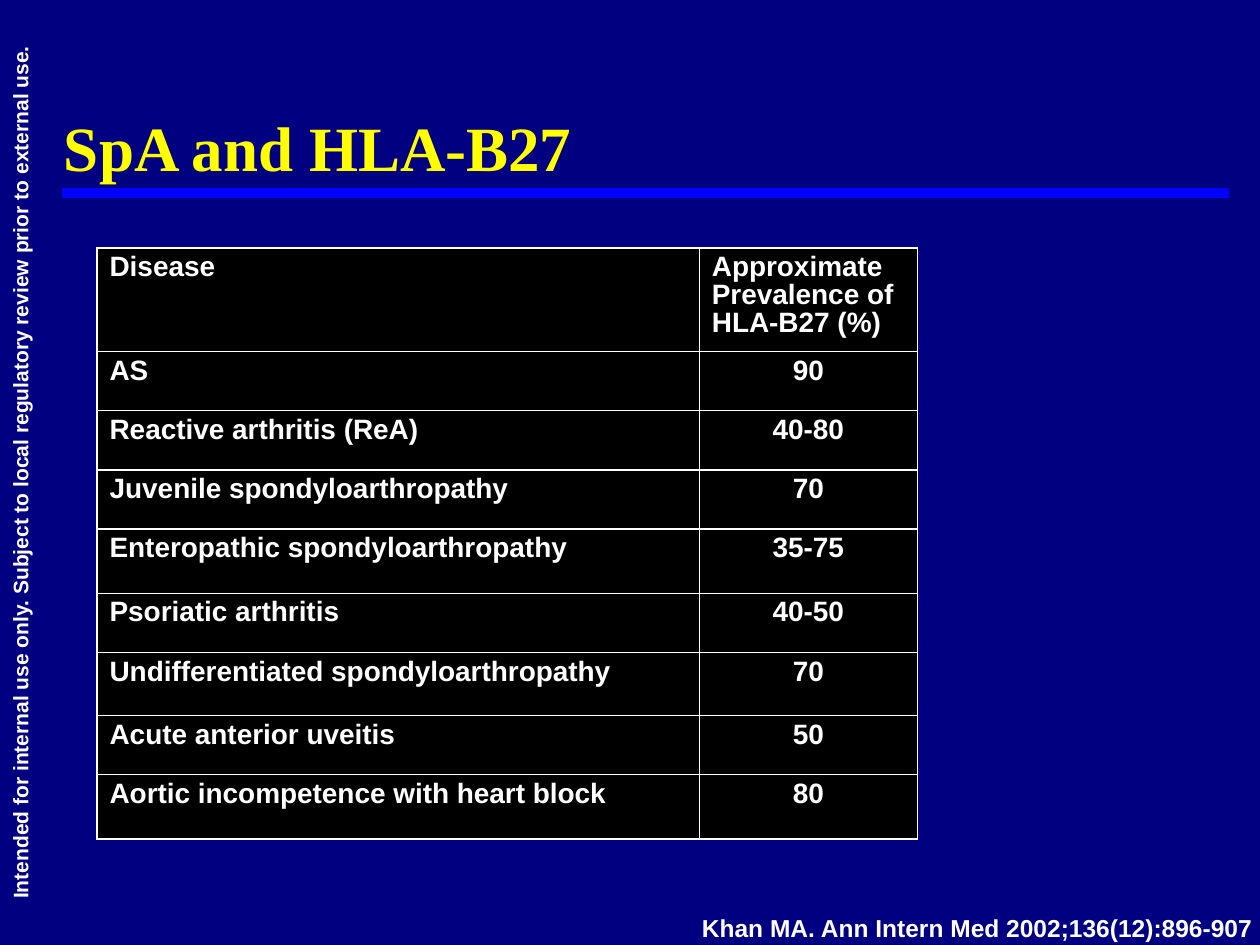
from dataclasses import dataclass
from typing import NamedTuple

from lxml.etree import SubElement
from pptx import Presentation
from pptx.dml.color import RGBColor as Rgb
from pptx.enum.shapes import MSO_CONNECTOR as Connector
from pptx.enum.text import MSO_ANCHOR as Anchor, PP_ALIGN as Align
from pptx.oxml.ns import qn
from pptx.slide import Slide
from pptx.table import _Cell as Cell
from pptx.text.text import _Paragraph as Paragraph
from pptx.util import Inches, Pt


@dataclass(frozen=True)
class Theme:
    background: Rgb = Rgb(0, 0, 128)
    rule: Rgb = Rgb(0, 0, 255)
    title: Rgb = Rgb(255, 255, 0)
    text: Rgb = Rgb(255, 255, 255)
    cell: Rgb = Rgb(0, 0, 0)
    title_font: str = "Times New Roman"
    body_font: str = "Arial"
    title_size: int = 36
    table_size: int = 16
    citation_size: int = 14
    notice_size: int = 12


THEME = Theme()


class Caption(NamedTuple):
    text: str
    left: float
    top: float
    width: float
    height: float
    size: int
    align: Align
    color: Rgb = THEME.text
    font: str = THEME.body_font
    rotation: int = 0
    line_spacing: float = 1.0


class Prevalence(NamedTuple):
    disease: str
    percent: str
    height: float = 0.47


CAPTIONS = [
    Caption("Intended for internal use only. Subject to local regulatory review "
            "prior to external use.", -3.59, 3.6, 7.5, 0.3,
            THEME.notice_size, Align.CENTER, rotation=270),
    Caption("SpA and HLA-B27", 0.41, 0.88, 9, 0.55, THEME.title_size, Align.LEFT,
            THEME.title, THEME.title_font, line_spacing=0.9),
    Caption("Khan MA. Ann Intern Med 2002;136(12):896-907", 4.44, 7.2, 5.6, 0.33,
            THEME.citation_size, Align.RIGHT),
]

PREVALENCES = [
    Prevalence("Disease", "Approximate Prevalence of HLA-B27 (%)", 0.82),
    Prevalence("AS", "90"),
    Prevalence("Reactive arthritis (ReA)", "40-80"),
    Prevalence("Juvenile spondyloarthropathy", "70"),
    Prevalence("Enteropathic spondyloarthropathy", "35-75", 0.51),
    Prevalence("Psoriatic arthritis", "40-50"),
    Prevalence("Undifferentiated spondyloarthropathy", "70", 0.5),
    Prevalence("Acute anterior uveitis", "50"),
    Prevalence("Aortic incompetence with heart block", "80", 0.51),
]
COLUMN_WIDTHS = (4.78, 1.73)


def style(paragraph: Paragraph, font: str, size: int, color: Rgb,
          align: Align, line_spacing: float) -> None:
    paragraph.alignment = align
    paragraph.line_spacing = line_spacing
    paragraph.font.name = font
    paragraph.font.size = Pt(size)
    paragraph.font.bold = True
    paragraph.font.color.rgb = color


def add_caption(slide: Slide, caption: Caption) -> None:
    box = slide.shapes.add_textbox(Inches(caption.left), Inches(caption.top),
                                   Inches(caption.width), Inches(caption.height))
    box.rotation = caption.rotation
    frame = box.text_frame
    frame.word_wrap = True
    frame.vertical_anchor = Anchor.TOP
    frame.text = caption.text
    style(frame.paragraphs[0], caption.font, caption.size, caption.color,
          caption.align, caption.line_spacing)


def add_title_rule(slide: Slide) -> None:
    rule = slide.shapes.add_connector(Connector.STRAIGHT, Inches(0.49), Inches(1.53),
                                      Inches(9.75), Inches(1.53))
    rule.line.color.rgb = THEME.rule
    rule.line.width = Pt(6)
    SubElement(rule._element.spPr, qn("a:effectLst"))


def add_borders(cell: Cell) -> None:
    properties = cell._tc.get_or_add_tcPr()
    for position, side in enumerate(("lnL", "lnR", "lnT", "lnB")):
        border = SubElement(properties, qn(f"a:{side}"), w=str(Pt(1)))
        fill = SubElement(border, qn("a:solidFill"))
        SubElement(fill, qn("a:srgbClr"), val=str(THEME.text))
        properties.insert(position, border)


def fill_cell(cell: Cell, text: str, align: Align) -> None:
    cell.fill.solid()
    cell.fill.fore_color.rgb = THEME.cell
    cell.text = text
    style(cell.text_frame.paragraphs[0], THEME.body_font, THEME.table_size,
          THEME.text, align, 0.9)
    add_borders(cell)


def add_prevalence_table(slide: Slide) -> None:
    table = slide.shapes.add_table(
        len(PREVALENCES), len(COLUMN_WIDTHS), Inches(0.77), Inches(1.97),
        Inches(sum(COLUMN_WIDTHS)),
        Inches(sum(entry.height for entry in PREVALENCES))).table
    table.first_row = False
    table.horz_banding = False
    for column, width in zip(table.columns, COLUMN_WIDTHS):
        column.width = Inches(width)
    for index, entry in enumerate(PREVALENCES):
        table.rows[index].height = Inches(entry.height)
        fill_cell(table.cell(index, 0), entry.disease, Align.LEFT)
        fill_cell(table.cell(index, 1), entry.percent,
                  Align.CENTER if index else Align.LEFT)


def main() -> None:
    deck = Presentation()
    deck.slide_width, deck.slide_height = Inches(10), Inches(7.5)
    slide = deck.slides.add_slide(deck.slide_layouts[6])
    slide.background.fill.solid()
    slide.background.fill.fore_color.rgb = THEME.background
    add_title_rule(slide)
    notice, title, citation = CAPTIONS
    add_caption(slide, notice)
    add_caption(slide, title)
    add_prevalence_table(slide)
    add_caption(slide, citation)
    deck.save("out.pptx")


if __name__ == "__main__":
    main()
